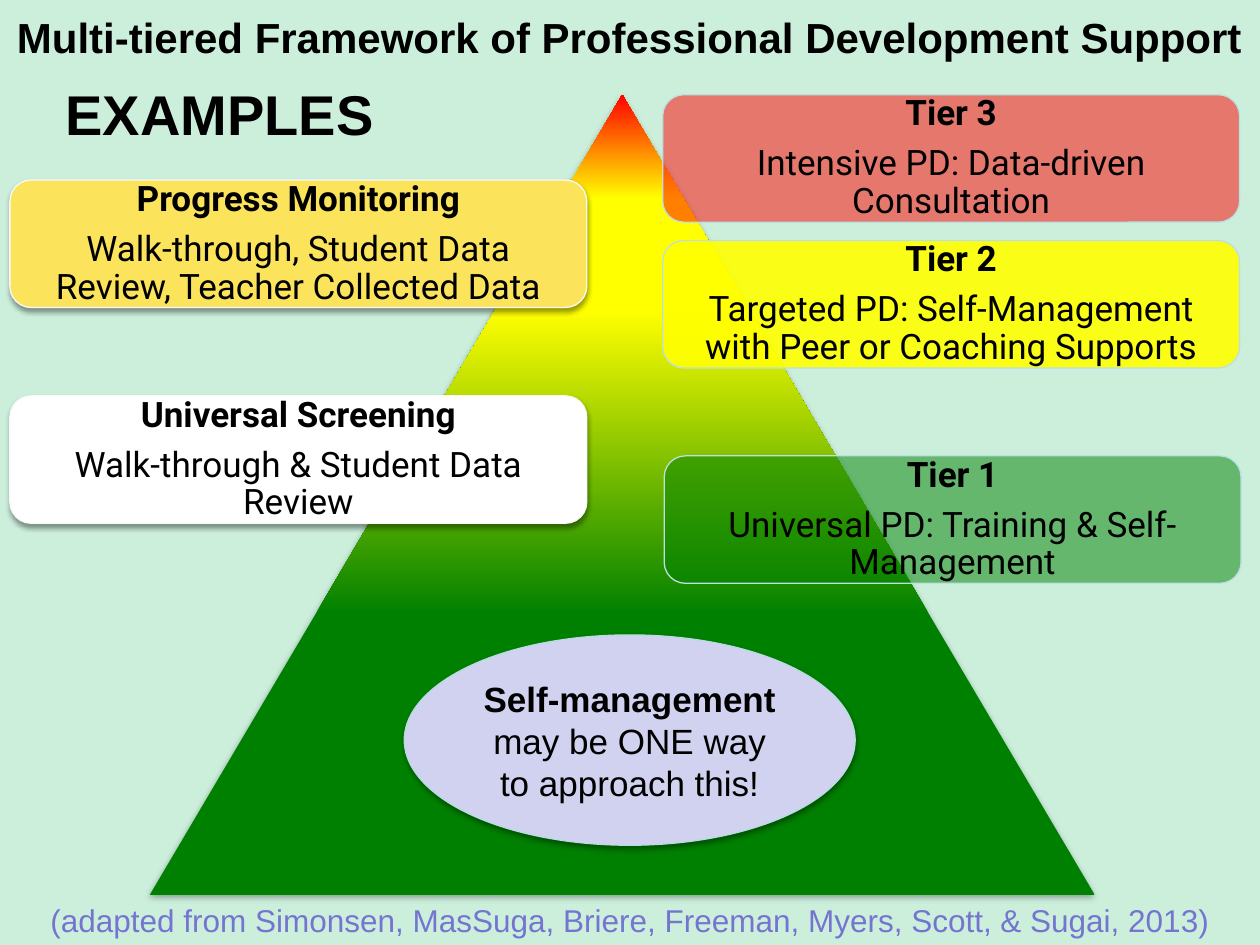
from pptx import Presentation
from pptx.dml.color import RGBColor
from pptx.enum.shapes import MSO_SHAPE
from pptx.enum.text import MSO_ANCHOR, MSO_AUTO_SIZE, PP_ALIGN
from pptx.oxml import parse_xml
from pptx.oxml.ns import nsdecls, qn
from pptx.util import Cm, Pt
from lxml.etree import SubElement

MINT = RGBColor(0xCC, 0xEF, 0xDC)
BLACK = RGBColor(0x00, 0x00, 0x00)
WHITE = RGBColor(0xFF, 0xFF, 0xFF)
RED = RGBColor(0xFF, 0x00, 0x00)
YELLOW = RGBColor(0xFF, 0xFF, 0x00)
GREEN = RGBColor(0x00, 0x80, 0x00)
GOLD = RGBColor(0xFC, 0xE3, 0x5C)
PALE_BLUE = RGBColor(0xBB, 0xE0, 0xE3)
PALE_TEAL = RGBColor(0xB6, 0xDC, 0xDF)
PALE_GREY = RGBColor(0xF9, 0xF9, 0xF9)
LAVENDER = RGBColor(0xD1, 0xD1, 0xF0)
VIOLET = RGBColor(0x75, 0x75, 0xD1)

PYRAMID_STOPS = [(35, GREEN), (73, YELLOW), (87, YELLOW), (100, RED)]
CARD_WIDTH, CARD_HEIGHT, CARD_INSET = 11.63, 2.57, 0.12
TIERS = [
    (13.36, 1.91, RED, 50, "Tier 3", "Intensive PD: Data-driven Consultation"),
    (13.36, 4.85, YELLOW, 90, "Tier 2",
     "Targeted PD: Self-Management with Peer or Coaching Supports"),
    (13.39, 9.19, GREEN, 50, "Tier 1", "Universal PD: Training & Self-Management"),
]
EXAMPLES = [
    (0.2, 3.63, GOLD, "Progress Monitoring",
     "Walk-through, Student Data Review, Teacher Collected Data"),
    (0.2, 7.98, WHITE, "Universal Screening", "Walk-through & Student Data Review"),
]


def add_run(paragraph, text, size, bold=False, font="Arial", color=BLACK):
    """Append one formatted run to a paragraph."""
    run = paragraph.add_run()
    run.text = text
    run.font.name = font
    run.font.size = Pt(size)
    run.font.bold = bold
    run.font.color.rgb = color


def add_shadow(shape, opacity, distance):
    """Give a shape a soft shadow that falls straight down."""
    shape._element.spPr.append(parse_xml(
        f'<a:effectLst {nsdecls("a")}><a:outerShdw blurRad="{Pt(3.1)}" '
        f'dist="{Pt(distance)}" dir="5400000" rotWithShape="0"><a:srgbClr val="000000">'
        f'<a:alpha val="{opacity * 1000}"/></a:srgbClr></a:outerShdw></a:effectLst>'))


def add_filled_shape(slide, kind, box, fill, line, opacity=100, shadow=None):
    """Add a preset shape with a solid fill, a thin line and an optional shadow."""
    shape = slide.shapes.add_shape(kind, *map(Cm, box))
    shape.fill.solid()
    shape.fill.fore_color.rgb = fill
    if opacity < 100:
        color = shape._element.spPr.find(qn("a:solidFill"))[0]
        SubElement(color, qn("a:alpha"), val=str(opacity * 1000))
    shape.line.color.rgb = line
    shape.line.width = Pt(0.75)
    if shadow:
        add_shadow(shape, *shadow)
    else:
        shape.shadow.inherit = False
    return shape


def add_pyramid(slide):
    """Add the triangle that blends from green at the base to red at the tip."""
    shape = slide.shapes.add_shape(
        MSO_SHAPE.ISOSCELES_TRIANGLE, Cm(3.02), Cm(1.91), Cm(19.05), Cm(16.13))
    stops = "".join(
        f'<a:gs pos="{position * 1000}"><a:srgbClr val="{color}"/></a:gs>'
        for position, color in PYRAMID_STOPS)
    shape._element.spPr.find(qn("a:prstGeom")).addnext(parse_xml(
        f'<a:gradFill {nsdecls("a")} rotWithShape="1"><a:gsLst>{stops}</a:gsLst>'
        '<a:lin ang="16200000" scaled="0"/></a:gradFill>'))
    shape.line.fill.background()
    add_shadow(shape, 35, 1.8)


def add_card(slide, left, top, fill, line, heading, body, opacity=100, shadow=None):
    """Add a rounded card with a bold heading over a body paragraph."""
    add_filled_shape(slide, MSO_SHAPE.ROUNDED_RECTANGLE,
                     (left, top, CARD_WIDTH, CARD_HEIGHT), fill, line, opacity, shadow)
    textbox = slide.shapes.add_textbox(
        Cm(left + CARD_INSET), Cm(top + CARD_INSET),
        Cm(CARD_WIDTH - 2 * CARD_INSET), Cm(CARD_HEIGHT - 2 * CARD_INSET))
    frame = textbox.text_frame
    frame.word_wrap = True
    frame.vertical_anchor = MSO_ANCHOR.MIDDLE
    frame.margin_left = frame.margin_right = Cm(0.2)
    frame.margin_top = frame.margin_bottom = Cm(0.2)
    paragraphs = [frame.paragraphs[0], frame.add_paragraph()]
    for paragraph, text, bold in zip(paragraphs, (heading, body), (True, False)):
        paragraph.alignment = PP_ALIGN.CENTER
        paragraph.line_spacing = 0.9
        paragraph.space_after = Pt(7)
        add_run(paragraph, text, 20, bold, "Roboto")


def add_label(slide, box, text, size, bold, color, alignment, wrap):
    """Add a text box with one line of text."""
    frame = slide.shapes.add_textbox(*map(Cm, box)).text_frame
    frame.word_wrap = wrap
    frame.auto_size = MSO_AUTO_SIZE.SHAPE_TO_FIT_TEXT
    frame.paragraphs[0].alignment = alignment
    add_run(frame.paragraphs[0], text, size, bold, color=color)


def set_title(slide, text):
    """Place and fill the title placeholder."""
    title = slide.shapes.title
    title.left, title.top, title.width, title.height = map(Cm, (-0.43, 0, 26.24, 1.47))
    frame = title.text_frame
    frame.auto_size = MSO_AUTO_SIZE.NONE
    frame.vertical_anchor = MSO_ANCHOR.MIDDLE
    frame.paragraphs[0].alignment = PP_ALIGN.CENTER
    add_run(frame.paragraphs[0], text, 24, True)


def add_callout(slide):
    """Add the ellipse about self-management."""
    ellipse = add_filled_shape(slide, MSO_SHAPE.OVAL, (8.15, 12.8, 9.09, 4.24),
                               LAVENDER, PALE_TEAL, shadow=(35, 1.8))
    frame = ellipse.text_frame
    frame.word_wrap = True
    frame.vertical_anchor = MSO_ANCHOR.MIDDLE
    paragraph = frame.paragraphs[0]
    paragraph.alignment = PP_ALIGN.CENTER
    add_run(paragraph, "Self-management ", 20, True)
    add_run(paragraph, "may be ONE way to approach this!", 20)


def main():
    """Build the slide and save it."""
    presentation = Presentation()
    presentation.slide_width, presentation.slide_height = Cm(25.4), Cm(19.05)
    slide = presentation.slides.add_slide(presentation.slide_layouts[5])
    slide.background.fill.solid()
    slide.background.fill.fore_color.rgb = MINT
    set_title(slide, "Multi-tiered Framework of Professional Development Support")
    add_pyramid(slide)
    for left, top, fill, opacity, heading, body in TIERS:
        add_card(slide, left, top, fill, PALE_BLUE, heading, body, opacity)
    for left, top, fill, heading, body in EXAMPLES:
        add_card(slide, left, top, fill, PALE_GREY, heading, body, shadow=(38, 1.6))
    add_label(slide, (0, 18.03, 25.4, 1.02),
              "(adapted from Simonsen, MasSuga, Briere, Freeman, Myers, Scott, & Sugai, 2013)",
              18, False, VIOLET, PP_ALIGN.CENTER, True)
    add_callout(slide)
    add_label(slide, (1.07, 1.47, 6.78, 1.63), "EXAMPLES", 32, True, BLACK,
              PP_ALIGN.LEFT, False)
    presentation.save("out.pptx")


if __name__ == "__main__":
    main()
